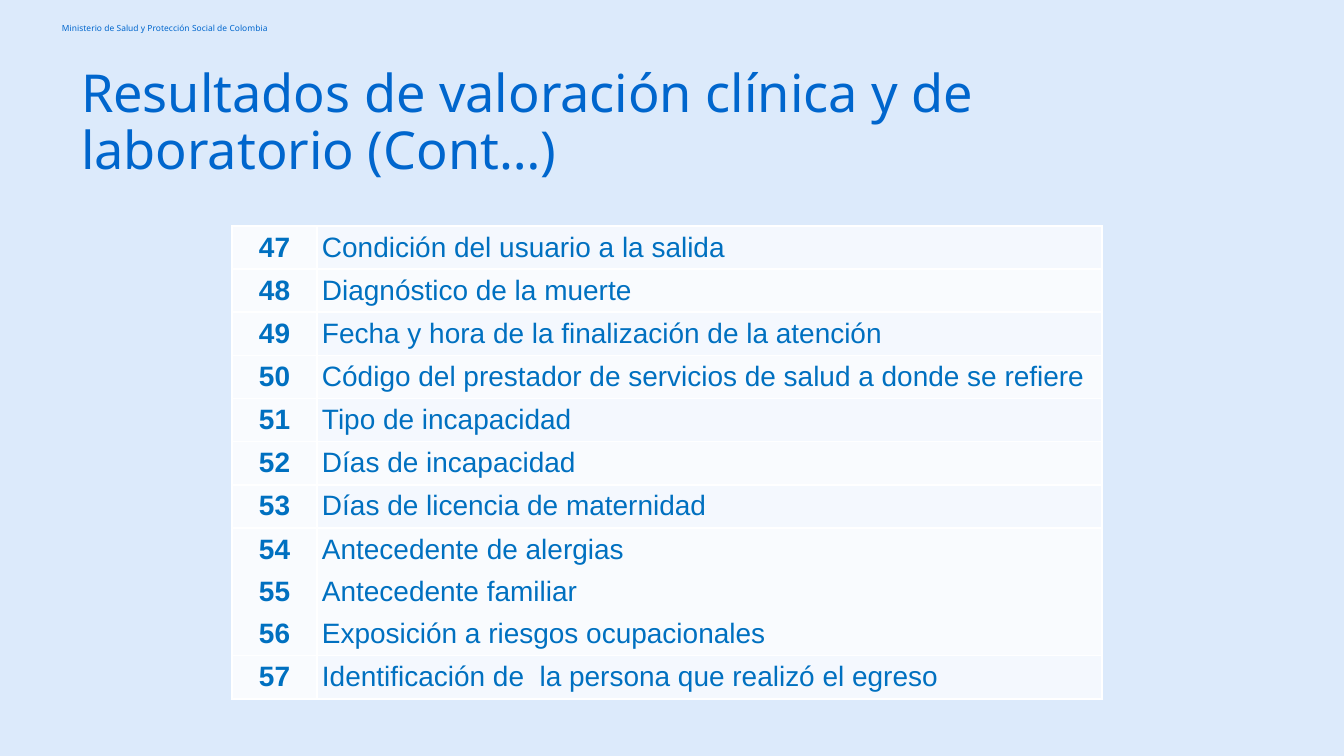
from lxml import etree
from pptx import Presentation
from pptx.dml.color import RGBColor
from pptx.enum.text import MSO_ANCHOR, MSO_AUTO_SIZE, PP_ALIGN
from pptx.oxml.ns import qn
from pptx.util import Pt

LEFT, CENTER = PP_ALIGN.LEFT, PP_ALIGN.CENTER
MIDDLE, TOP = MSO_ANCHOR.MIDDLE, MSO_ANCHOR.TOP
NO_FIT = MSO_AUTO_SIZE.NONE

BACK = RGBColor(0xDC, 0xEA, 0xFB)
BLUE = RGBColor(0x00, 0x66, 0xCD)
INK = RGBColor(0x00, 0x70, 0xC0)
PALE = RGBColor(0xF9, 0xFB, 0xFE)
BAND = RGBColor(0xF4, 0xF8, 0xFE)
WHITE = RGBColor(0xFF, 0xFF, 0xFF)

HEADER = "Ministerio de Salud y Protección Social de Colombia"
TITLE = "Resultados de valoración clínica y de laboratorio (Cont…)"
FIRST = 47
# Each row holds one or more consecutively numbered items
ROWS = [
    ["Condición del usuario a la salida"],
    ["Diagnóstico de la muerte"],
    ["Fecha y hora de la finalización de la atención"],
    ["Código del prestador de servicios de salud a donde se refiere"],
    ["Tipo de incapacidad"],
    ["Días de incapacidad"],
    ["Días de licencia de maternidad"],
    ["Antecedente de alergias", "Antecedente familiar",
     "Exposición a riesgos ocupacionales"],
    ["Identificación de  la persona que realizó el egreso"],
]
COLS = [85, 785]
ROW, TALL = 34, 117


def px(n):
    return round(n * 914400 / 134.4)


def add_run(para, text, font, size, color, bold=False):
    run = para.add_run()
    run.text = text
    run.font.name, run.font.size, run.font.bold = font, Pt(size), bold
    run.font.color.rgb = color


def set_text(shape, box, pad, text, size):
    shape.left, shape.top, shape.width, shape.height = map(px, box)
    frame = shape.text_frame
    frame.word_wrap, frame.auto_size = True, NO_FIT
    frame.vertical_anchor = MIDDLE
    frame.margin_left = frame.margin_right = px(pad)
    frame.margin_top = frame.margin_bottom = px(pad // 2)
    para = frame.paragraphs[0]
    para.alignment, para.line_spacing = LEFT, 0.9
    add_run(para, text, "Noto Sans", size, BLUE)


def set_edges(cell):
    props = cell._tc.get_or_add_tcPr()
    for i, side in enumerate(("lnL", "lnR", "lnT", "lnB")):
        line = etree.Element(qn("a:" + side), w=str(Pt(0.96)))
        fill = etree.SubElement(line, qn("a:solidFill"))
        etree.SubElement(fill, qn("a:srgbClr"), val=str(WHITE))
        props.insert(i, line)


def fill_cell(cell, lines, align, bold, color):
    cell.fill.solid()
    cell.fill.fore_color.rgb = color
    set_edges(cell)
    cell.vertical_anchor = TOP
    cell.margin_left = cell.margin_right = px(5)
    cell.margin_top = cell.margin_bottom = px(6)
    frame = cell.text_frame
    for i, text in enumerate(lines):
        para = frame.add_paragraph() if i else frame.paragraphs[0]
        para.alignment, para.space_before = align, Pt(6)
        add_run(para, text, "Arial", 15, INK, bold)


def add_items(slide):
    high = [TALL if len(items) > 1 else ROW for items in ROWS]
    frame = slide.shapes.add_table(len(ROWS), len(COLS), px(232), px(226),
                                   px(sum(COLS)), px(sum(high)))
    table = frame.table
    table.first_row = table.horz_banding = False
    for col, wide in zip(table.columns, COLS):
        col.width = px(wide)
    num = FIRST
    for i, items in enumerate(ROWS):
        table.rows[i].height = px(high[i])
        codes = [str(num + k) for k in range(len(items))]
        num += len(items)
        fill_cell(table.cell(i, 0), codes, CENTER, True, PALE)
        fill_cell(table.cell(i, 1), items, LEFT, False,
                  PALE if i % 2 else BAND)


def main():
    deck = Presentation()
    deck.slide_width, deck.slide_height = px(1344), px(756)
    slide = deck.slides.add_slide(deck.slide_layouts[5])
    slide.background.fill.solid()
    slide.background.fill.fore_color.rgb = BACK
    head = slide.shapes.add_textbox(0, 0, 0, 0)
    set_text(head, (54, 15, 314, 27), 8, HEADER, 4.5)
    add_items(slide)
    set_text(slide.shapes.title, (71, 58, 945, 132), 10, TITLE, 28)
    deck.save("out.pptx")


if __name__ == "__main__":
    main()
